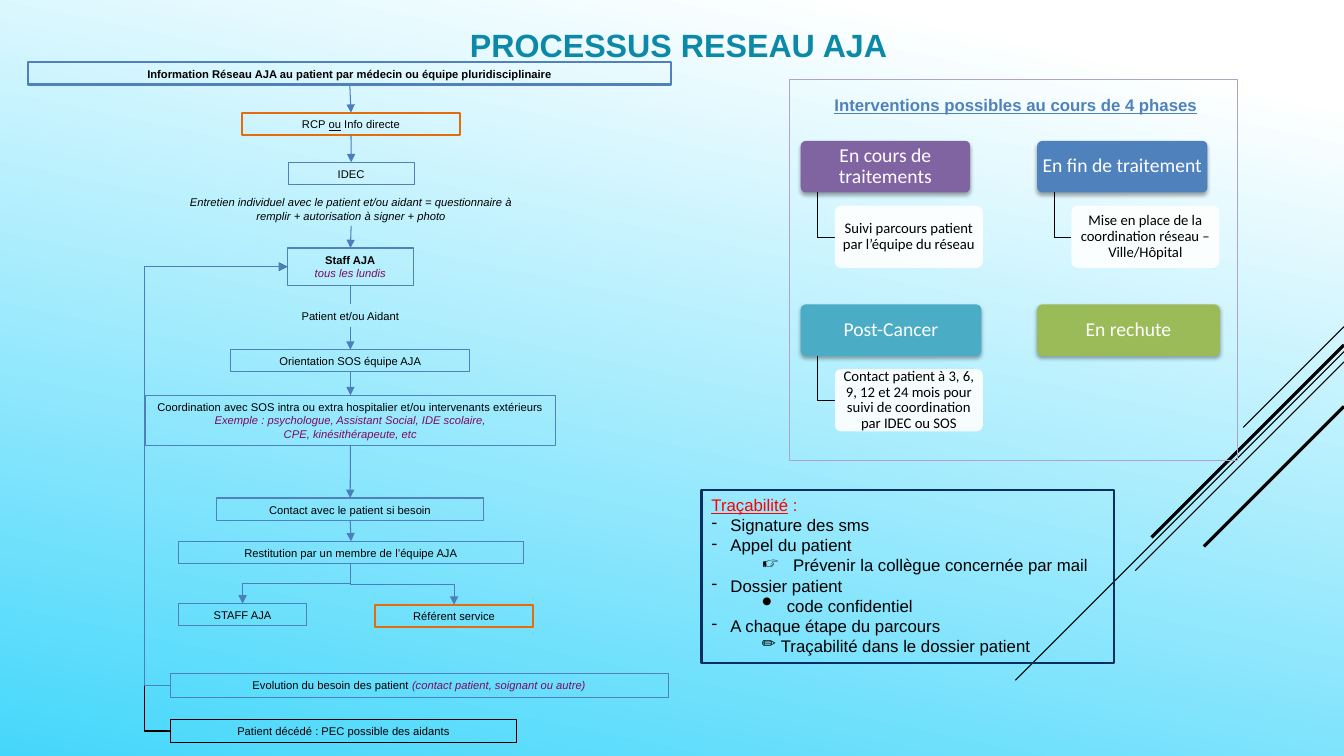
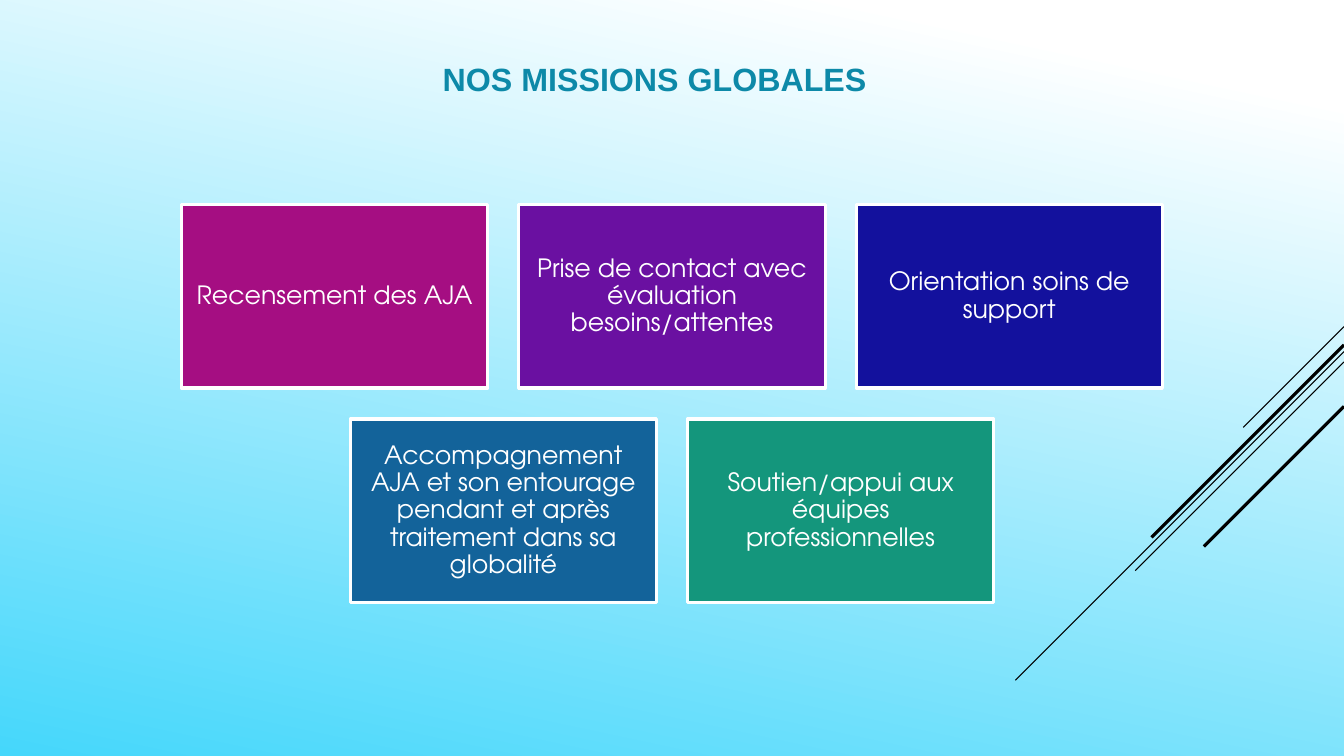
from pptx import Presentation
from pptx import util as u
from pptx.dml.color import RGBColor
from pptx.enum import shapes, text
from pptx.oxml import parse_xml
from pptx.oxml.ns import nsdecls, qn

BLACK, WHITE, BLUE, ARROW, ORANGE, PLUM = "000000", "FFFFFF", "4F81BD", "4B7EBC", "E46C0A", "7C0B61"
WIDTH, HEIGHT = 33.87, 19.05
SKY = [(0.1, WHITE), (1, "45D7FB")]
STREAKS = [(8.23, 2.54, 0.75), (8.86, 8.28, 0.75), (9.12, 5.26, 0.75), (8.69, 4.85, 2.25), (10.24, 3.53, 2.25)]

ACCENT = dict(color=PLUM, italic=True)
STEPS = {
    "information": (["Information Réseau AJA au patient par médecin ou équipe pluridisciplinaire"],
                    (0.71, 1.57, 16.21, 0.56), BLUE, 1.5, dict(bold=True)),
    "rcp": ([["RCP ", ("ou", dict(underline=True)), " Info directe"]], (6.1, 2.84, 5.49, 0.56), ORANGE, 1.5, {}),
    "idec": (["IDEC"], (7.26, 4.09, 3.18, 0.56), BLUE, 0.75, {}),
    "interview": (["Entretien individuel avec le patient et/ou aidant = questionnaire à remplir "
                   "+ autorisation à signer + photo"], (4.29, 4.8, 9.12, 0.89), None, 0, dict(italic=True)),
    "staff": ([[("Staff AJA", dict(bold=True))], [("tous les lundis", ACCENT)]],
              (7.24, 6.25, 3.18, 0.94), BLUE, 0.75, {}),
    "patient": (["Patient et/ou Aidant"], (6.48, 7.67, 4.7, 0.56), None, 0, {}),
    "orientation": (["Orientation SOS équipe AJA"], (5.82, 8.81, 6.02, 0.56), BLUE, 0.75, {}),
    "coordination": (["Coordination avec SOS intra ou extra hospitalier et/ou intervenants extérieurs",
                      [("Exemple : psychologue, Assistant Social, IDE scolaire,", ACCENT)],
                      [("CPE, kinésithérapeute, etc", ACCENT)]], (3.66, 9.96, 10.34, 1.27), BLUE, 0.75, {}),
    "contact": (["Contact avec le patient si besoin"], (5.46, 12.55, 6.73, 0.56), BLUE, 0.75, {}),
    "restitution": (["Restitution par un membre de l’équipe AJA"], (4.5, 13.64, 8.69, 0.56), BLUE, 0.75, {}),
    "staff_end": (["STAFF AJA"], (4.5, 15.21, 3.23, 0.56), BLUE, 0.75, {}),
    "referent": (["Référent service"], (9.45, 15.24, 3.99, 0.56), ORANGE, 1.5, {}),
    "evolution": ([["Evolution du besoin des patient ", ("(contact patient, soignant ou autre)", ACCENT)]],
                  (4.29, 16.97, 12.55, 0.61), BLUE, 0.75, {}),
    "deceased": (["Patient décédé : PEC possible des aidants"], (4.29, 18.14, 8.74, 0.56), BLACK, 0.75, {}),
}
LINKS = [("information", "rcp", True), ("rcp", "idec", True), ("interview", "staff", True),
         ("staff", "patient", False), ("patient", "orientation", True), ("orientation", "coordination", True),
         ("coordination", "contact", True), ("contact", "restitution", True)]
BRANCHES = [("restitution", "referent", 270, True), ("restitution", "staff_end", 90, False)]
LOOPS = [("deceased", BLACK), ("evolution", ARROW)]

PHASES = [
    ("En cours de traitements", "8064A2", 4.27, "Suivi parcours patient par l’équipe du réseau"),
    ("En fin de traitement", BLUE, 4.29, "Mise en place de la coordination réseau – Ville/Hôpital"),
    ("Post-Cancer", "4BACC6", 4.55, "Contact patient à 3, 6, 9, 12 et 24 mois pour suivi de coordination par IDEC ou SOS"),
    ("En rechute", "9BBB59", 4.6, None),
]
DASH = ("‐", 0.48, 0.48, 100)
TRACKING = [
    (None, [("Traçabilité", dict(color="FF0000", underline=True)), (" :", dict(color="FF0000"))]),
    (DASH, "Signature des sms"),
    (DASH, "Appel du patient"),
    (("☞", 2.06, 0.79, 100), "Prévenir la collègue concernée par mail"),
    (DASH, "Dossier patient"),
    (("•", 1.9, 0.63, 180), "code confidentiel"),
    (DASH, "A chaque étape du parcours"),
    (("✏", 1.75, 0.48, 100), "Traçabilité dans le dossier patient"),
]
MISSIONS = [
    [("Recensement des AJA", "A50E82"), ("Prise de contact avec évaluation besoins/attentes", "6A10A1"),
     ("Orientation soins de support", "13119D")],
    [("Accompagnement AJA et son entourage pendant et après traitement dans sa globalité", "13639A"),
     ("Soutien/appui aux équipes professionnelles", "14967C")],
]


def rgb(value):
    return RGBColor.from_string(value)


def cms(*values):
    return [u.Cm(value) for value in values]


def add_bullet(paragraph, char, left, hanging, percent):
    props = paragraph._p.get_or_add_pPr()
    props.set("marL", str(u.Cm(left)))
    props.set("indent", str(-u.Cm(hanging)))
    props.append(parse_xml(f'<a:buSzPct {nsdecls("a")} val="{percent * 1000}"/>'))
    props.append(parse_xml(f'<a:buChar {nsdecls("a")} char="{char}"/>'))


def write(shape, paragraphs, size=8, font="Arial", color=BLACK, bold=False, italic=False, underline=False,
          align="CENTER", anchor="TOP", inset=None, spacing=None, bullets=None):
    frame = shape.text_frame
    frame.word_wrap = True
    frame.vertical_anchor = getattr(text.MSO_ANCHOR, anchor)
    if inset is not None:
        frame.margin_left = frame.margin_right = frame.margin_top = frame.margin_bottom = u.Cm(inset)
    base = dict(color=color, bold=bold, italic=italic, underline=underline)
    for index, runs in enumerate(paragraphs):
        paragraph = frame.add_paragraph() if index else frame.paragraphs[0]
        paragraph.alignment = getattr(text.PP_ALIGN, align)
        if spacing:
            paragraph.line_spacing = spacing
        if bullets and bullets[index]:
            add_bullet(paragraph, *bullets[index])
        for part in [runs] if isinstance(runs, str) else runs:
            words, changes = (part, {}) if isinstance(part, str) else part
            look = {**base, **changes}
            run = paragraph.add_run()
            run.text = words
            run.font.size, run.font.name = u.Pt(size), font
            run.font.color.rgb = rgb(look["color"])
            run.font.bold, run.font.italic, run.font.underline = look["bold"], look["italic"], look["underline"]


def add_box(slide, place, fill=None, line=None, weight=0.75, rounded=False):
    kind = shapes.MSO_SHAPE.ROUNDED_RECTANGLE if rounded else shapes.MSO_SHAPE.RECTANGLE
    box = slide.shapes.add_shape(kind, *cms(*place))
    box.shadow.inherit = False
    if rounded:
        box.adjustments[0] = 0.1
    if fill:
        box.fill.solid()
        box.fill.fore_color.rgb = rgb(fill)
    else:
        box.fill.background()
    if line:
        box.line.color.rgb = rgb(line)
        box.line.width = u.Pt(weight)
    else:
        box.line.fill.background()
    return box


def add_line(slide, start, end, color=ARROW, weight=0.75, arrow=False, elbow=False):
    kind = shapes.MSO_CONNECTOR.ELBOW if elbow else shapes.MSO_CONNECTOR.STRAIGHT
    line = slide.shapes.add_connector(kind, *cms(*start, *end))
    line.line.color.rgb = rgb(color)
    line.line.width = u.Pt(weight)
    if arrow:
        line.line._get_or_add_ln().append(parse_xml(f'<a:tailEnd {nsdecls("a")} type="triangle"/>'))
    line.element.spPr.append(parse_xml(f'<a:effectLst {nsdecls("a")}/>'))
    return line


def link(slide, first, second, sites=(2, 0), **look):
    line = add_line(slide, (0, 0), (1, 1), **look)
    line.begin_connect(first, sites[0])
    line.end_connect(second, sites[1])
    return line


def link_bent(slide, first, second, sites, turn, flip, bend=0.5, color=ARROW):
    line = link(slide, first, second, sites, color=color, arrow=True, elbow=True)
    if turn % 180:
        left, top, width, height = line.left, line.top, line.width, line.height
        line.left, line.top = left + (width - height) // 2, top + (height - width) // 2
        line.width, line.height = height, width
    frame = line.element.spPr.find(qn("a:xfrm"))
    for key, value in dict(rot=turn * 60000, flipH=int(flip), flipV=0).items():
        frame.set(key, str(value))
    guides = line.element.spPr.find(qn("a:prstGeom")).get_or_add_avLst()
    guides.append(parse_xml(f'<a:gd {nsdecls("a")} name="adj1" fmla="val {round(bend * 100000)}"/>'))


def add_slide(deck, title, place, align):
    slide = deck.slides.add_slide(deck.slide_layouts[5])
    heading = slide.shapes.title
    heading.left, heading.top, heading.width, heading.height = cms(*place)
    write(heading, [title], size=23, color="0D89A8", bold=True, align=align, anchor="MIDDLE")
    return slide


def style_master(deck, slide):
    master = deck.slide_master
    fill = master.background.fill
    fill.gradient()
    fill.gradient_angle = 258
    for stop, (position, color) in zip(fill.gradient_stops, SKY):
        stop.position, stop.color.rgb = position, rgb(color)
    for number, (top, reach, weight) in enumerate(STREAKS, 101):
        streak = add_line(slide, (WIDTH, top), (WIDTH - reach, top + reach), BLACK, weight)
        streak.element.nvCxnSpPr.cNvPr.set("id", str(number))
        master.shapes.element.append(streak.element)


def draw_process(slide):
    steps = {}
    for name, (words, place, line, weight, look) in STEPS.items():
        steps[name] = slide.shapes.add_textbox(*cms(*place)) if line is None else add_box(
            slide, place, line=line, weight=weight)
        write(steps[name], words, **look)
    for first, second, arrow in LINKS:
        link(slide, steps[first], steps[second], arrow=arrow)
    for first, second, turn, flip in BRANCHES:
        link_bent(slide, steps[first], steps[second], (2, 0), turn, flip)
    for first, color in LOOPS:
        link_bent(slide, steps[first], steps["staff"], (1, 1), 180, True, -0.216, color)


def draw_phases(slide):
    heading = slide.shapes.add_textbox(*cms(20.4, 2.26, 10.41, 0.76))
    write(heading, ["Interventions possibles au cours de 4 phases"], size=12, color=BLUE, bold=True, underline=True)
    inner = dict(font="Calibri", anchor="MIDDLE", spacing=0.9)
    for index, (name, color, width, detail) in enumerate(PHASES):
        left, top = 20.18 + index % 2 * 5.96, 3.55 + index // 2 * 4.12
        phase = add_box(slide, (left, top, width, 1.3), fill=color, rounded=True)
        shade = phase.element.spPr.find(qn("a:effectLst"))
        shade.append(parse_xml(
            f'<a:outerShdw {nsdecls("a")} blurRad="39370" dist="22860" dir="5400000" rotWithShape="0">'
            f'<a:srgbClr val="{BLACK}"><a:alpha val="35000"/></a:srgbClr></a:outerShdw>'))
        write(phase, [name], size=14, color=WHITE, inset=0.03, **inner)
        if not detail:
            continue
        outline = slide.shapes.build_freeform(*cms(left + 0.43, top + 1.3))
        outline.add_line_segments([cms(left + 0.43, top + 2.42), cms(left + 0.86, top + 2.42)], close=False)
        bracket = outline.convert_to_shape()
        bracket.shadow.inherit = False
        bracket.fill.background()
        bracket.line.color.rgb = rgb(BLACK)
        bracket.line.width = u.Pt(0.5)
        note = add_box(slide, (left + 0.86, top + 1.63, 3.73, 1.57), fill=WHITE, rounded=True)
        tint = note.element.spPr.find(qn("a:solidFill"))[0]
        tint.append(parse_xml(f'<a:alpha {nsdecls("a")} val="90000"/>'))
        write(note, [detail], size=10.5, inset=0.05, **inner)
    add_box(slide, (19.89, 2.01, 11.3, 9.6), line="B3A2C7")


def draw_tracking(slide):
    bullets, paragraphs = zip(*TRACKING)
    tracking = add_box(slide, (17.68, 12.34, 10.39, 4.37), line="052F61", weight=1.5)
    write(tracking, paragraphs, size=12, align="LEFT", bullets=bullets)


def draw_missions(slide):
    width, height, gap = 7.72, 4.62, 0.78
    for row, missions in enumerate(MISSIONS):
        start = (WIDTH - len(missions) * (width + gap) + gap) / 2
        for column, (mission, color) in enumerate(missions):
            place = (start + column * (width + gap), 5.16 + row * (height + gap), width, height)
            card = add_box(slide, place, fill=color, line=WHITE, weight=2.25)
            write(card, [mission], size=18, font="TeX Gyre Adventor", color=WHITE, anchor="MIDDLE",
                  inset=0.18, spacing=0.9)


def main():
    deck = Presentation()
    deck.slide_width, deck.slide_height = cms(WIDTH, HEIGHT)
    process = add_slide(deck, "PROCESSUS RESEAU AJA", (10.29, 0.51, 13.64, 1.24), "CENTER")
    style_master(deck, process)
    draw_process(process)
    draw_phases(process)
    draw_tracking(process)
    draw_missions(add_slide(deck, "NOS MISSIONS GLOBALES", (10.9, 0.86, 22.5, 2.26), "LEFT"))
    deck.save("out.pptx")


if __name__ == "__main__":
    main()
